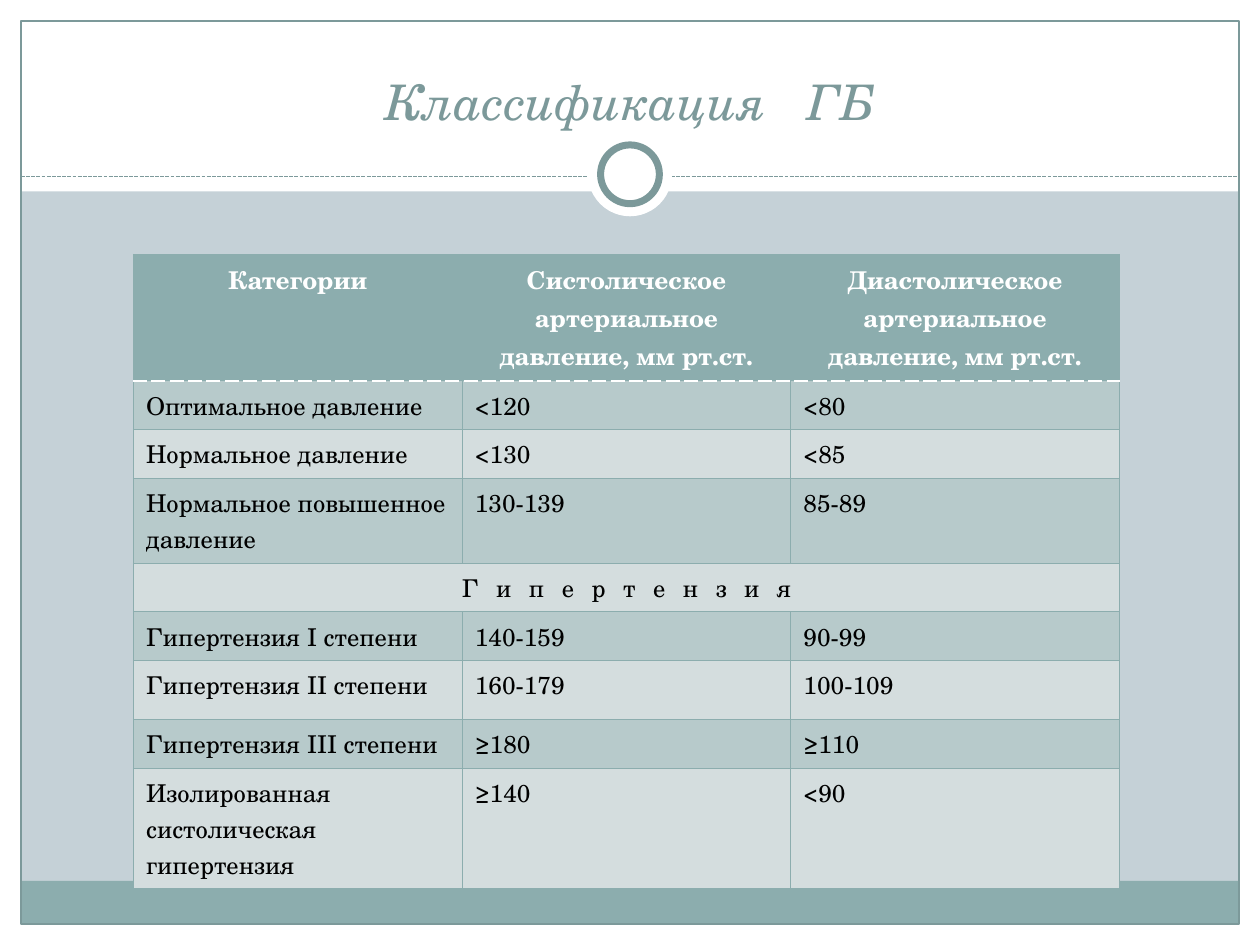
from lxml.etree import SubElement
from pptx import Presentation
from pptx.dml.color import RGBColor
from pptx.enum.dml import MSO_LINE
from pptx.enum.shapes import MSO_CONNECTOR, MSO_SHAPE
from pptx.enum.text import MSO_ANCHOR, PP_ALIGN
from pptx.oxml.ns import qn
from pptx.util import Inches, Pt

WHITE = RGBColor(0xFF, 0xFF, 0xFF)
BLACK = RGBColor(0x00, 0x00, 0x00)
BACKGROUND = RGBColor(0xC5, 0xD1, 0xD7)
TEAL = RGBColor(0x8C, 0xAD, 0xAE)
DARK_TEAL = RGBColor(0x7C, 0x99, 0x9A)
DARK_BAND = RGBColor(0xB7, 0xCA, 0xCB)
LIGHT_BAND = RGBColor(0xD4, 0xDD, 0xDE)

FONT = "TeX Gyre Schola"
COLUMNS, ROWS = 60, 45

# Row heights by number of text lines, in grid rows
HEADER, ONE_LINE, ROOMY_LINE, TWO_LINES, THREE_LINES = 6.02, 2.32, 2.8, 4.04, 5.76

PRESSURES = [
    (HEADER, ("Категории", "Систолическое артериальное давление, мм рт.ст.",
              "Диастолическое артериальное давление, мм рт.ст.")),
    (ONE_LINE, ("Оптимальное давление", "<120", "<80")),
    (ONE_LINE, ("Нормальное давление", "<130", "<85")),
    (TWO_LINES, ("Нормальное повышенное давление", "130-139", "85-89")),
    (ONE_LINE, ("Гипертензия",)),
    (ONE_LINE, ("Гипертензия I степени", "140-159", "90-99")),
    (ROOMY_LINE, ("Гипертензия II степени", "160-179", "100-109")),
    (ONE_LINE, ("Гипертензия III степени", "≥180", "≥110")),
    (THREE_LINES, ("Изолированная систолическая гипертензия", "≥140", "<90")),
]


class SlidePainter:
    """Draws styled elements on one page; lengths are grid columns and rows."""

    def __init__(self, deck):
        self.unit_x = deck.slide_width / COLUMNS
        self.unit_y = deck.slide_height / ROWS
        self.page = deck.slides.add_slide(deck.slide_layouts[6])
        fill = self.page.background.fill
        fill.solid()
        fill.fore_color.rgb = BACKGROUND

    def x(self, columns):
        return round(columns * self.unit_x)

    def y(self, rows):
        return round(rows * self.unit_y)

    def area(self, left, top, width, height):
        return self.x(left), self.y(top), self.x(width), self.y(height)

    def shape(self, kind, place, fill=None, line=None, weight=0.75):
        shape = self.page.shapes.add_shape(kind, *self.area(*place))
        shape.shadow.inherit = False
        if fill is None:
            shape.fill.background()
        else:
            shape.fill.solid()
            shape.fill.fore_color.rgb = fill
        if line is None:
            shape.line.fill.background()
        else:
            shape.line.color.rgb = line
            shape.line.width = Pt(weight)

    def dashed_rule(self, left, right, row):
        rule = self.page.shapes.add_connector(
            MSO_CONNECTOR.STRAIGHT, self.x(left), self.y(row), self.x(right), self.y(row))
        rule.line.color.rgb = DARK_TEAL
        rule.line.width = Pt(0.75)
        rule.line.dash_style = MSO_LINE.SQUARE_DOT
        SubElement(rule.element.spPr, qn("a:effectLst"))

    def span(self, para, text, color, spacing=0, **style):
        span = para.add_run()
        span.text = text
        span.font.color.rgb = color
        for name, value in {"name": FONT, "size": Pt(14), **style}.items():
            setattr(span.font, name, value)
        if spacing:
            span.font._element.set("spc", str(spacing * 100))

    def title(self, place, words):
        box = self.page.shapes.add_textbox(*self.area(*place))
        frame = box.text_frame
        frame.word_wrap = True
        frame.vertical_anchor = MSO_ANCHOR.BOTTOM
        para = frame.paragraphs[0]
        para.alignment = PP_ALIGN.CENTER
        style = {"size": Pt(28), "italic": True}
        first, last = words
        self.span(para, first, DARK_TEAL, **style)
        self.span(para, " ", DARK_TEAL, spacing=16, **style)  # wide word gap
        self.span(para, last, DARK_TEAL, **style)

    def border(self, cell, side, color, weight, dash="solid"):
        line = SubElement(cell._tc.get_or_add_tcPr(), qn(f"a:ln{side}"), w=str(Pt(weight)))
        SubElement(SubElement(line, qn("a:solidFill")), qn("a:srgbClr"), val=str(color))
        SubElement(line, qn("a:prstDash"), val=dash)

    def cell(self, cell, row):
        white_side = {0: "B", 1: "T"}.get(row)
        for side in "LRTB":
            if side == white_side:
                self.border(cell, side, WHITE, 0.9, "sysDash")
            else:
                self.border(cell, side, TEAL, 0.75)
        cell.fill.solid()
        band = DARK_BAND if row % 2 else LIGHT_BAND
        cell.fill.fore_color.rgb = band if row else TEAL

    def table(self, left, top, width, records):
        count = len(records[0][1])
        place = self.area(left, top, width, sum(height for height, _ in records))
        table = self.page.shapes.add_table(len(records), count, *place).table
        table.horz_banding = False
        for column in table.columns:
            column.width = self.x(width / count)
        for row, (height, texts) in enumerate(records):
            header, section = row == 0, len(texts) == 1
            table.rows[row].height = self.y(height)
            for column in range(count):
                self.cell(table.cell(row, column), row)
            if section:
                table.cell(row, 0).merge(table.cell(row, count - 1))
            for column, text in enumerate(texts):
                para = table.cell(row, column).text_frame.paragraphs[0]
                para.alignment = PP_ALIGN.CENTER if header or section else PP_ALIGN.LEFT
                self.span(para, text, WHITE if header else BLACK,
                          spacing=10 if section else 0, bold=header)


def main():
    deck = Presentation()
    deck.slide_width, deck.slide_height = Inches(10), Inches(7.5)
    painter = SlidePainter(deck)

    # White margins and heading area
    for place in [(0, 44, 60, 1), (0, 0, 60, 9.12), (0, 0, 1, 45), (59, 0, 1, 45)]:
        painter.shape(MSO_SHAPE.RECTANGLE, place, fill=WHITE)

    # Footer band, frame and dashed rule
    painter.shape(MSO_SHAPE.RECTANGLE, (1, 41.95, 58, 2.05), fill=TEAL)
    painter.shape(MSO_SHAPE.RECTANGLE, (1, 1, 58, 43), line=DARK_TEAL)
    painter.dashed_rule(1, 59, 8.4)

    # Ring on the rule
    painter.shape(MSO_SHAPE.OVAL, (28, 6.3, 4, 4), fill=WHITE)
    painter.shape(MSO_SHAPE.OVAL, (28.6, 6.9, 2.8, 2.8), fill=WHITE, line=DARK_TEAL, weight=4)

    # Title and pressure table
    painter.title((2, 1.5, 56, 5), ("Классификация", "ГБ"))
    painter.table(6.36, 12.12, 46.95, PRESSURES)

    deck.save("out.pptx")


if __name__ == "__main__":
    main()
